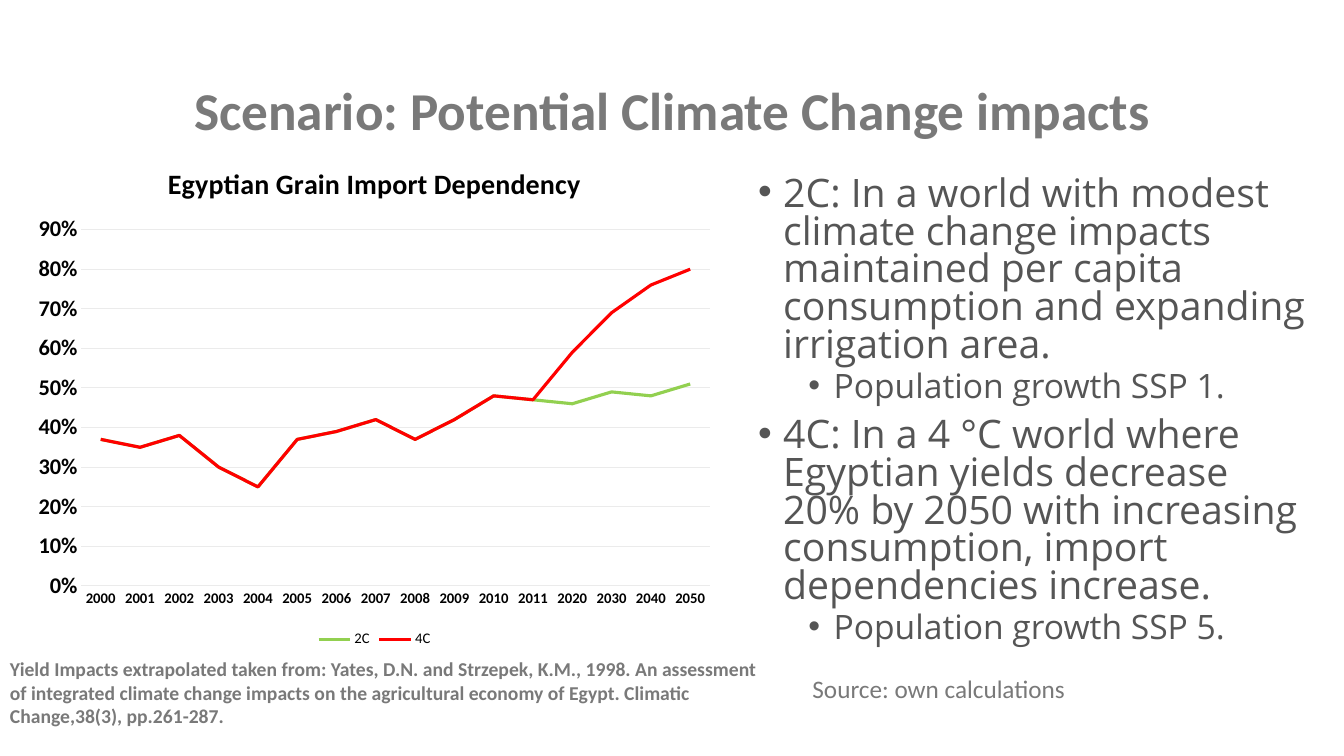
from lxml import etree
from pptx import Presentation
from pptx.chart.data import CategoryChartData
from pptx.dml.color import RGBColor
from pptx.enum.chart import XL_CHART_TYPE, XL_LEGEND_POSITION, XL_TICK_MARK
from pptx.enum.text import MSO_ANCHOR, PP_ALIGN
from pptx.oxml.ns import qn
from pptx.util import Pt

LINE_CHART = XL_CHART_TYPE.LINE
LEGEND_BOTTOM = XL_LEGEND_POSITION.BOTTOM
NO_TICK = XL_TICK_MARK.NONE
TOP, MIDDLE = MSO_ANCHOR.TOP, MSO_ANCHOR.MIDDLE
LEFT, CENTER = PP_ALIGN.LEFT, PP_ALIGN.CENTER

EMU_PER_PX = 9144  # 100 px to the inch
COLORS = {
    "heading": "797979",
    "body": "555555",
    "axis": "000000",
    "grid": "EBEBEB",
    "2C": "92D050",
    "4C": "FF0000",
}
HEADING_FONT, BODY_FONT = "Calibri", "Open Sans"

YEARS = [str(year) for year in [*range(2000, 2012), *range(2020, 2051, 10)]]
HISTORY = [0.37, 0.35, 0.38, 0.3, 0.25, 0.37, 0.39, 0.42, 0.37, 0.42, 0.48, 0.47]
PROJECTIONS = {
    "2C": [0.46, 0.49, 0.48, 0.51],
    "4C": [0.59, 0.69, 0.76, 0.8],
}
# Share of the chart frame taken by the plot
PLOT_LAYOUT = {"x": 0.08, "y": 0.17, "w": 0.9, "h": 0.7}

SCENARIOS = [
    (0, "2C: In a world with modest climate change impacts maintained per capita "
        "consumption and expanding irrigation area."),
    (1, "Population growth SSP 1."),
    (0, "4C: In a 4 °C world where Egyptian yields decrease 20% by 2050 with "
        "increasing consumption, import dependencies increase."),
    (1, "Population growth SSP 5."),
]
# Size, left margin in px and space before for each bullet level
BULLET_LEVELS = [(28, 25, 10), (24, 75, 5)]
BULLET_INDENT = -25

CITATION = ("Yield Impacts extrapolated taken from: Yates, D.N. and Strzepek, K.M., 1998. "
            "An assessment of integrated climate change impacts on the agricultural "
            "economy of Egypt. Climatic Change,38(3), pp.261-287.")


def px(length):
    return length * EMU_PER_PX


def style_font(font, size, color, name=HEADING_FONT, bold=False):
    font.size = Pt(size)
    font.name = name
    font.bold = bold
    font.color.rgb = RGBColor.from_string(COLORS[color])


def add_text_frame(slide, box, anchor=TOP):
    text_frame = slide.shapes.add_textbox(*map(px, box)).text_frame
    text_frame.word_wrap = True
    text_frame.vertical_anchor = anchor
    return text_frame


def add_label(slide, box, text, size, bold=False, align=LEFT, anchor=TOP):
    text_frame = add_text_frame(slide, box, anchor)
    text_frame.text = text
    paragraph = text_frame.paragraphs[0]
    paragraph.alignment = align
    style_font(paragraph.runs[0].font, size, "heading", bold=bold)
    return paragraph


def add_bullets(slide, box, items):
    text_frame = add_text_frame(slide, box)
    for index, (level, text) in enumerate(items):
        paragraph = text_frame.add_paragraph() if index else text_frame.paragraphs[0]
        size, margin, space_before = BULLET_LEVELS[level]
        paragraph.text = text
        paragraph.level = level
        properties = paragraph._p.get_or_add_pPr()
        properties.set("marL", str(px(margin)))
        properties.set("indent", str(px(BULLET_INDENT)))
        etree.SubElement(properties, qn("a:buFont")).set("typeface", "Arial")
        etree.SubElement(properties, qn("a:buChar")).set("char", "•")
        paragraph.line_spacing = 0.8
        paragraph.space_before = Pt(space_before if index else 0)
        style_font(paragraph.runs[0].font, size, "body", BODY_FONT)


def style_line(line, color, width):
    line.color.rgb = RGBColor.from_string(COLORS[color])
    line.width = Pt(width)


def style_axis(axis, size):
    axis.major_tick_mark = axis.minor_tick_mark = NO_TICK
    style_font(axis.tick_labels.font, size, "axis", bold=True)


def place_plot(chart):
    plot_area = chart._chartSpace.chart.plotArea
    for layout in plot_area.findall(qn("c:layout")):
        plot_area.remove(layout)
    layout = etree.Element(qn("c:layout"))
    plot_area.insert(0, layout)
    manual = etree.SubElement(layout, qn("c:manualLayout"))
    settings = {"layoutTarget": "inner", "xMode": "edge", "yMode": "edge", **PLOT_LAYOUT}
    for tag, value in settings.items():
        etree.SubElement(manual, qn(f"c:{tag}")).set("val", str(value))


def add_dependency_chart(slide, box):
    data = CategoryChartData(number_format="0%")
    data.categories = YEARS
    for name, projection in PROJECTIONS.items():
        data.add_series(name, HISTORY + projection)
    chart = slide.shapes.add_chart(LINE_CHART, *map(px, box), data).chart
    style_font(chart.font, 10, "heading")

    # Title and legend
    chart.has_title = True
    title_frame = chart.chart_title.text_frame
    title_frame.text = "Egyptian Grain Import Dependency"
    style_font(title_frame.paragraphs[0].runs[0].font, 20, "axis", bold=True)
    chart.chart_title.include_in_layout = False
    chart.has_legend = True
    chart.legend.position = LEGEND_BOTTOM
    chart.legend.include_in_layout = False
    style_font(chart.legend.font, 10.5, "axis")

    # Axes
    style_axis(chart.category_axis, 10.5)
    style_line(chart.category_axis.format.line, "grid", 0.75)
    value_axis = chart.value_axis
    style_axis(value_axis, 16)
    value_axis.minimum_scale, value_axis.maximum_scale = 0, 0.9
    value_axis.major_unit = 0.1
    value_axis.tick_labels.number_format = "0%"
    value_axis.tick_labels.number_format_is_linked = False
    value_axis.format.line.fill.background()
    style_line(value_axis.major_gridlines.format.line, "grid", 0.75)

    # Series
    plot = chart.plots[0]
    plot.vary_by_categories = False
    for series in plot.series:
        series.smooth = False
        style_line(series.format.line, series.name, 2.25)
    place_plot(chart)


def main():
    presentation = Presentation()
    presentation.slide_width, presentation.slide_height = px(1333), px(750)
    slide = presentation.slides.add_slide(presentation.slide_layouts[6])

    # Heading
    heading = add_label(slide, (92, 40, 1150, 145),
                        "Scenario: Potential Climate Change impacts",
                        38, bold=True, align=CENTER, anchor=MIDDLE)
    heading.line_spacing = 0.9

    # Scenarios and chart
    add_bullets(slide, (742, 171, 567, 503), SCENARIOS)
    add_dependency_chart(slide, (25, 142, 693, 505))

    # Sources
    add_label(slide, (796, 663, 557, 40), "Source: own calculations", 18)
    add_label(slide, (0, 647, 772, 81), CITATION, 14, bold=True)

    presentation.save("out.pptx")


if __name__ == "__main__":
    main()
